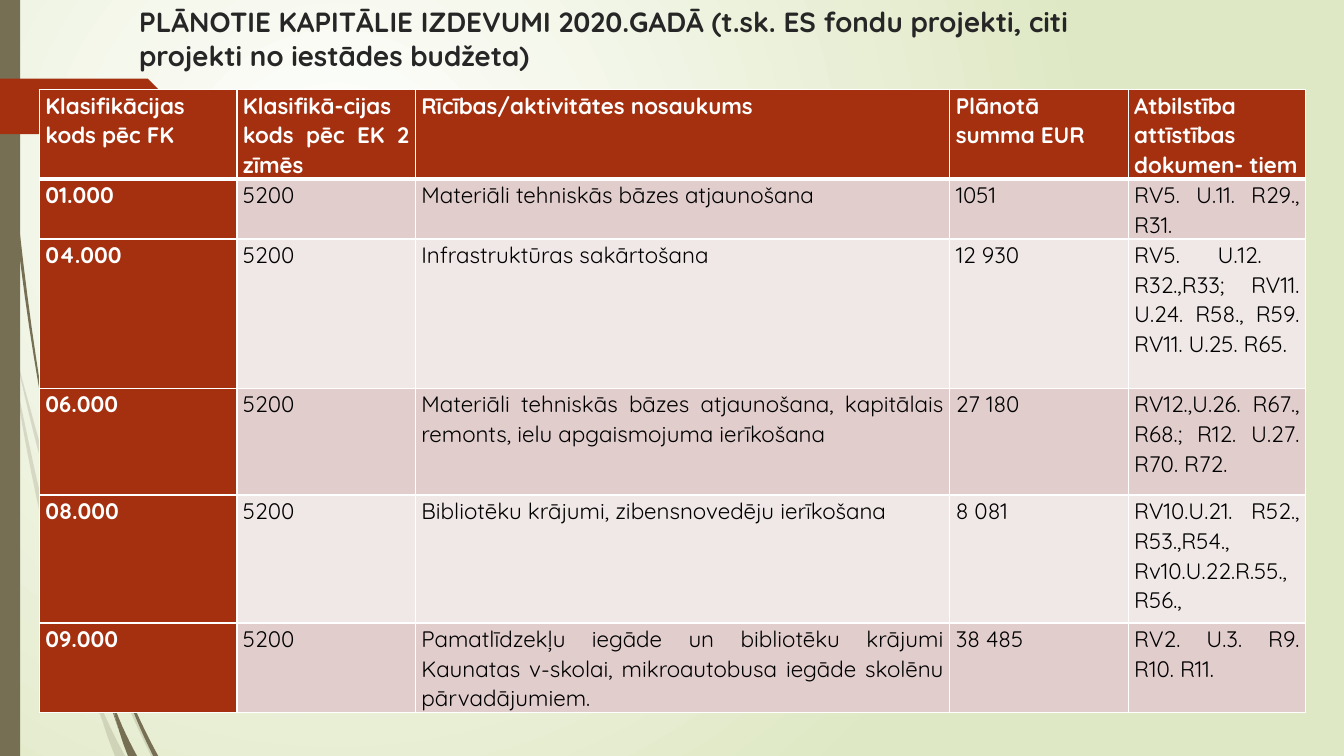
from math import pi, sin
from lxml.etree import SubElement as Sub
from pptx import Presentation
from pptx.dml.color import RGBColor
from pptx.enum.shapes import MSO_SHAPE as Kind
from pptx.enum.text import MSO_ANCHOR as Anchor, MSO_AUTO_SIZE as Fit, PP_ALIGN as Align
from pptx.oxml.ns import qn
from pptx.util import Inches, Pt

RED, OLIVE, WHITE, BLACK = "A53010", "766F54", "FFFFFF", "000000"


def color(code):
    return RGBColor.from_string(code)


def write(frame, text, size=16, ink=BLACK, bold=False, align=Align.JUSTIFY, space=1.07):
    para = frame.paragraphs[0]
    para.alignment = align
    para.line_spacing = space
    run = para.add_run()
    run.text = text
    run.font.name = "Quicksand"
    run.font.size = Pt(size)
    run.font.bold = bold
    run.font.color.rgb = color(ink)


prs = Presentation()
prs.slide_width, prs.slide_height = Inches(13.33), Inches(7.5)
slide = prs.slides.add_slide(prs.slide_layouts[5])
shapes = slide.shapes

# Background: round gradient
back = slide.background.fill
back.gradient()
for stop, code, pos in zip(back.gradient_stops, (WHITE, "DFE8C4"), (0, 1)):
    stop.color.rgb = color(code)
    stop.position = pos
grad = next(slide.element.iter(qn("a:gradFill")))
for lin in grad.findall(qn("a:lin")):
    grad.remove(lin)
sweep = Sub(grad, qn("a:path"), path="circle")
Sub(sweep, qn("a:fillToRect"), l="50000", t="50000", r="100000", b="100000")

# Grass blades: opacity, width, then start, bend and end of a curve
blades = [
    (20, 0.04, (0.14, 3.45), (0.42, 4.8), (0.84, 5.99)),
    (20, 0.05, (0.11, 3.5), (0.38, 5.48), (1.01, 7.14)),
    (20, 0.05, (0.88, 5.96), (1.15, 6.8), (1.5, 7.5)),
    (20, 0.1, (0.93, 6.83), (1, 7.15), (1.14, 7.5)),
    (100, 0.03, (0.03, 0), (0.04, 2.26), (0.57, 4.81)),
    (100, 0.05, (0.57, 4.77), (0.73, 5.9), (1.17, 7.22)),
    (100, 0.05, (1.1, 6.41), (1.27, 7), (1.52, 7.5)),
    (100, 0.09, (1.1, 6.91), (1.15, 7.2), (1.27, 7.5)),
]
STEPS = 16
for alpha, wide, start, bend, end in blades:
    near, far = [], []
    for step in range(STEPS + 1):
        t = step / STEPS
        x, y = (1000 * ((1 - t)**2 * a + 2 * t * (1 - t) * b + t * t * c)
                for a, b, c in zip(start, bend, end))
        # A blade cut by the slide edge widens; the others taper twice
        grow = t if end[1] == 7.5 else sin(pi * t)
        near.append((x, y))
        far.append((x + 1000 * wide * grow, y))
    pen = shapes.build_freeform(*near[0], scale=Inches(1) / 1000)
    pen.add_line_segments(near[1:] + far[::-1])
    blade = pen.convert_to_shape()
    blade.shadow.inherit = False
    blade.line.fill.background()
    blade.fill.solid()
    blade.fill.fore_color.rgb = color(OLIVE)
    tint = next(blade.element.spPr.iter(qn("a:srgbClr")))
    Sub(tint, qn("a:alpha"), val=str(alpha * 1000))

# Side bar and red tag
for kind, box, code in [(Kind.RECTANGLE, (0, 0, 0.2, 7.5), OLIVE),
                        (Kind.PENTAGON, (0, 0.78, 1.74, 0.55), RED)]:
    part = shapes.add_shape(kind, *map(Inches, box))
    part.shadow.inherit = False
    part.line.fill.background()
    part.fill.solid()
    part.fill.fore_color.rgb = color(code)

# Title, kept in front of the decoration
title = shapes.title
title.left, title.top, title.width, title.height = map(Inches, (1.28, 0, 9.75, 1.4))
shapes.element.append(title.element)
frame = title.text_frame
frame.word_wrap = True
frame.auto_size = Fit.NONE
frame.vertical_anchor = Anchor.TOP
write(frame, "PLĀNOTIE KAPITĀLIE IZDEVUMI 2020.GADĀ (t.sk. ES fondu projekti, citi projekti "
      "no iestādes budžeta)", size=19.8, ink="262626", bold=True, align=Align.LEFT, space=1)

# Table of planned spending
rows = [
    ("Klasifikācijas kods pēc FK", "Klasifikā-cijas kods pēc EK 2 zīmēs",
     "Rīcības/aktivitātes nosaukums", "Plānotā summa EUR", "Atbilstība attīstības dokumen- tiem"),
    ("01.000", "5200", "Materiāli tehniskās bāzes atjaunošana", "1051", "RV5. U.11. R29., R31."),
    ("04.000", "5200", "Infrastruktūras sakārtošana", "12 930",
     "RV5. U.12.  R32.,R33; RV11. U.24. R58., R59. RV11. U.25. R65."),
    ("06.000", "5200", "Materiāli tehniskās bāzes atjaunošana, kapitālais remonts, "
     "ielu apgaismojuma ierīkošana", "27 180", "RV12.,U.26. R67., R68.; R12. U.27. R70. R72."),
    ("08.000", "5200", "Bibliotēku krājumi, zibensnovedēju ierīkošana", "8 081",
     "RV10.U.21. R52., R53.,R54., Rv10.U.22.R.55., R56.,"),
    ("09.000", "5200", "Pamatlīdzekļu iegāde un bibliotēku krājumi Kaunatas v-skolai, "
     "mikroautobusa iegāde skolēnu pārvadājumiem.", "38 485", "RV2. U.3. R9. R10. R11."),
]
wides = 1.96, 1.77, 5.3, 1.77, 1.76
highs = 0.85, 0.42, 1.48, 1.06, 1.27, 0.85
table = shapes.add_table(len(rows), len(wides), Inches(0.39), Inches(0.89),
                         Inches(sum(wides)), Inches(sum(highs))).table
for col, wide in zip(table.columns, wides):
    col.width = Inches(wide)
for r, (row, high) in enumerate(zip(rows, highs)):
    table.rows[r].height = Inches(high)
    for c, text in enumerate(row):
        cell = table.cell(r, c)
        cell.margin_left = cell.margin_right = Inches(0.06)
        cell.margin_top = cell.margin_bottom = 0
        props = cell._tc.get_or_add_tcPr()
        for side in "LRTB":
            thick = 3 if (r, side) in ((0, "B"), (1, "T")) else 1
            edge = Sub(props, qn("a:ln" + side), w=str(Pt(thick)))
            Sub(Sub(edge, qn("a:solidFill")), qn("a:srgbClr"), val=WHITE)
        head = r == 0 or c == 0
        cell.fill.solid()
        cell.fill.fore_color.rgb = color(RED if head else "E1CDCC" if r % 2 else "F0E8E7")
        write(cell.text_frame, text, ink=WHITE if head else BLACK, bold=head)

prs.save("out.pptx")
